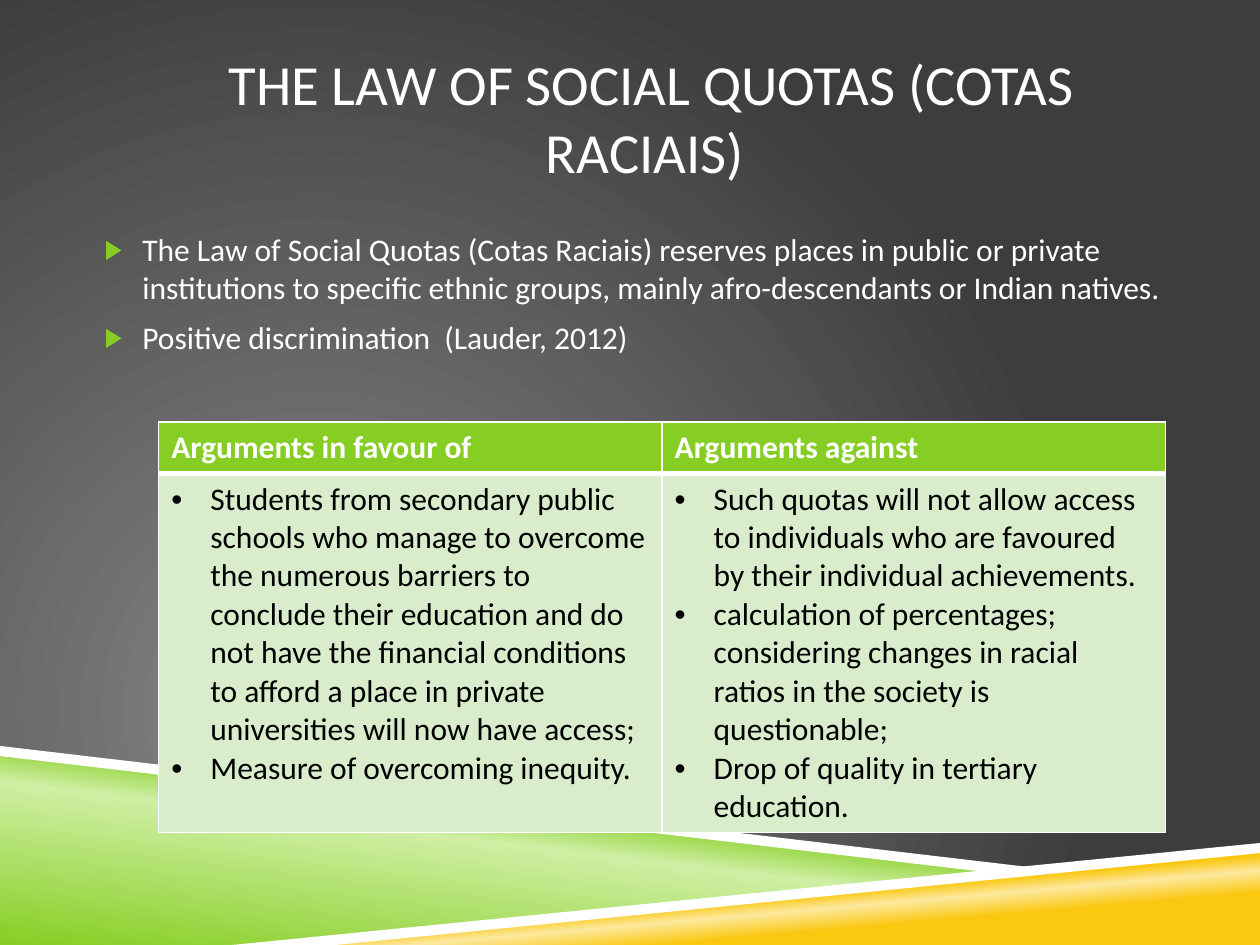
from dataclasses import dataclass

from lxml import etree
from pptx import Presentation
from pptx import util as u
from pptx.dml.color import RGBColor
from pptx.enum import text as t
from pptx.oxml import parse_xml
from pptx.oxml.ns import nsdecls, qn

WHITE, BLACK = "FFFFFF", "000000"
GREEN, PALE_GREEN, TABLE_GREEN = "86CE24", "CFEFA4", "D9EDCD"
YELLOW, PALE_YELLOW = "FAC810", "FDE99F"
FONT = "Calibri"
BODY_SIZE = 18

Stops = list[tuple[int, str]]


@dataclass
class Band:
    points: list[tuple[float, float]]
    color: str
    stops: Stops | None = None
    angle: int = 0


@dataclass
class Bullet:
    char: str
    margin: float
    hanging: float
    color: str | None = None
    size: int | None = None


@dataclass
class Column:
    heading: str
    arguments: list[str]


BANDS = [
    Band([(0, 5.97), (7.92, 6.92), (2, 7.5), (0, 7.5)], GREEN,
         [(0, GREEN), (52, PALE_GREEN), (66, GREEN)], 277),
    Band([(1.98, 7.5), (10, 6.72), (10, 7.5)], YELLOW,
         [(28, YELLOW), (40, PALE_YELLOW), (48, YELLOW)], 265),
    Band([(0, 5.92), (0, 6), (7.9, 6.93), (8.32, 6.9)], WHITE),
    Band([(10, 6.69), (1.84, 7.5), (2.66, 7.5), (10, 6.77)], WHITE),
]
ARROW_BULLET = Bullet("▶", 0.38, 0.3, GREEN, 85)
DOT_BULLET = Bullet("•", 0.31, 0.31)

TITLE = "THE LAW OF SOCIAL QUOTAS (COTAS RACIAIS) "
POINTS = [
    "The Law of Social Quotas (Cotas Raciais) reserves places in public or private "
    "institutions to specific ethnic groups, mainly afro-descendants or Indian natives.",
    "Positive discrimination  (Lauder, 2012)",
]
COLUMNS = [
    Column("Arguments in favour of", [
        "Students from secondary public schools who manage to overcome the numerous "
        "barriers to conclude their education and do not have the financial conditions "
        "to afford a place in private universities will now have access;",
        "Measure of overcoming inequity.",
    ]),
    Column("Arguments against", [
        "Such quotas will not allow access to individuals who are favoured by their "
        "individual achievements.",
        "calculation of percentages; considering changes in racial ratios in the "
        "society is questionable;",
        "Drop of quality in tertiary education.",
    ]),
]


def rgb(color: str) -> RGBColor:
    return RGBColor.from_string(color)


def replace_solid_fill(properties, stops: Stops, direction: str) -> None:
    """Swap the solid fill in the given properties for a gradient."""
    stop_xml = "".join(
        f'<a:gs pos="{position * 1000}"><a:srgbClr val="{color}"/></a:gs>'
        for position, color in stops)
    gradient = parse_xml(
        f'<a:gradFill {nsdecls("a")} rotWithShape="1">'
        f"<a:gsLst>{stop_xml}</a:gsLst>{direction}</a:gradFill>")
    properties.replace(properties.find(qn("a:solidFill")), gradient)


def paint_background(slide) -> None:
    fill = slide.background.fill
    fill.solid()
    fill.fore_color.rgb = rgb("3D3D3D")
    replace_solid_fill(
        slide.element.find(".//" + qn("p:bgPr")), [(0, "878787"), (100, "3D3D3D")],
        '<a:path path="circle">'
        '<a:fillToRect l="50000" t="100000" r="100000" b="50000"/></a:path>')


def draw_band(slide, band: Band) -> None:
    start, *others = [(u.Inches(x), u.Inches(y)) for x, y in band.points]
    builder = slide.shapes.build_freeform(*start)
    builder.add_line_segments(others, close=True)
    shape = builder.convert_to_shape()
    shape.shadow.inherit = False
    shape.line.fill.background()
    shape.fill.solid()
    shape.fill.fore_color.rgb = rgb(band.color)
    if band.stops:
        replace_solid_fill(shape.element.spPr, band.stops,
                           f'<a:lin ang="{band.angle * 60000}" scaled="0"/>')


def add_bullet(para, bullet: Bullet) -> None:
    properties = para._p.get_or_add_pPr()
    properties.set("marL", str(u.Inches(bullet.margin)))
    properties.set("indent", str(-u.Inches(bullet.hanging)))
    if bullet.color:
        color = etree.SubElement(properties, qn("a:buClr"))
        etree.SubElement(color, qn("a:srgbClr"), val=bullet.color)
    if bullet.size:
        etree.SubElement(properties, qn("a:buSzPct"), val=str(bullet.size * 1000))
    etree.SubElement(properties, qn("a:buFont"), typeface="Arial")
    etree.SubElement(properties, qn("a:buChar"), char=bullet.char)


def write(frame, lines: list[str], color: str, size: float = BODY_SIZE,
          bold: bool = False, bullet: Bullet | None = None, gap: float = 0) -> None:
    frame.text = "\n".join(lines)
    for index, para in enumerate(frame.paragraphs):
        if bullet:
            add_bullet(para, bullet)
        para.space_before = u.Pt(gap if index else 0)
        for span in para.runs:
            span.font.name = FONT
            span.font.size = u.Pt(size)
            span.font.bold = bold
            span.font.color.rgb = rgb(color)


def prepare_frame(frame, anchor) -> None:
    frame.word_wrap = True
    frame.auto_size = t.MSO_AUTO_SIZE.NONE
    frame.vertical_anchor = anchor
    frame.margin_left = frame.margin_right = 0
    frame.margin_top = frame.margin_bottom = u.Inches(0.05)


def format_cell(cell, fill: str, bottom_width: float = 1) -> None:
    """Give the cell white borders and a plain fill."""
    properties = cell._tc.get_or_add_tcPr()
    for side in ("lnL", "lnR", "lnT", "lnB"):
        width = bottom_width if side == "lnB" else 1
        line = etree.SubElement(properties, qn(f"a:{side}"), w=str(u.Pt(width)))
        solid = etree.SubElement(line, qn("a:solidFill"))
        etree.SubElement(solid, qn("a:srgbClr"), val=WHITE)
    cell.fill.solid()
    cell.fill.fore_color.rgb = rgb(fill)


def add_arguments(slide) -> None:
    table = slide.shapes.add_table(
        2, len(COLUMNS), u.Inches(1.26), u.Inches(3.35), u.Inches(7.99), u.Inches(3.25)).table
    table.horz_banding = False
    table.rows[0].height = u.Inches(0.41)
    table.rows[1].height = u.Inches(2.84)
    for index, column in enumerate(COLUMNS):
        heading, arguments = table.cell(0, index), table.cell(1, index)
        format_cell(heading, GREEN, bottom_width=3)
        write(heading.text_frame, [column.heading], WHITE, bold=True)
        format_cell(arguments, TABLE_GREEN)
        write(arguments.text_frame, column.arguments, BLACK, bullet=DOT_BULLET)


def main() -> None:
    deck = Presentation()
    deck.slide_width, deck.slide_height = u.Inches(10), u.Inches(7.5)
    slide = deck.slides.add_slide(deck.slide_layouts[5])
    paint_background(slide)
    for band in BANDS:
        draw_band(slide, band)

    title = slide.shapes.title
    title.left, title.top = u.Inches(1.64), u.Inches(0.3)
    title.width, title.height = u.Inches(7.06), u.Inches(1.25)
    prepare_frame(title.text_frame, t.MSO_ANCHOR.MIDDLE)
    write(title.text_frame, [TITLE], WHITE, size=32.4)
    title.text_frame.paragraphs[0].alignment = t.PP_ALIGN.CENTER

    box = slide.shapes.add_textbox(
        u.Inches(0.75), u.Inches(1.78), u.Inches(8.5), u.Inches(4.08))
    prepare_frame(box.text_frame, t.MSO_ANCHOR.TOP)
    write(box.text_frame, POINTS, WHITE, bullet=ARROW_BULLET, gap=7)

    add_arguments(slide)
    deck.save("out.pptx")


if __name__ == "__main__":
    main()
